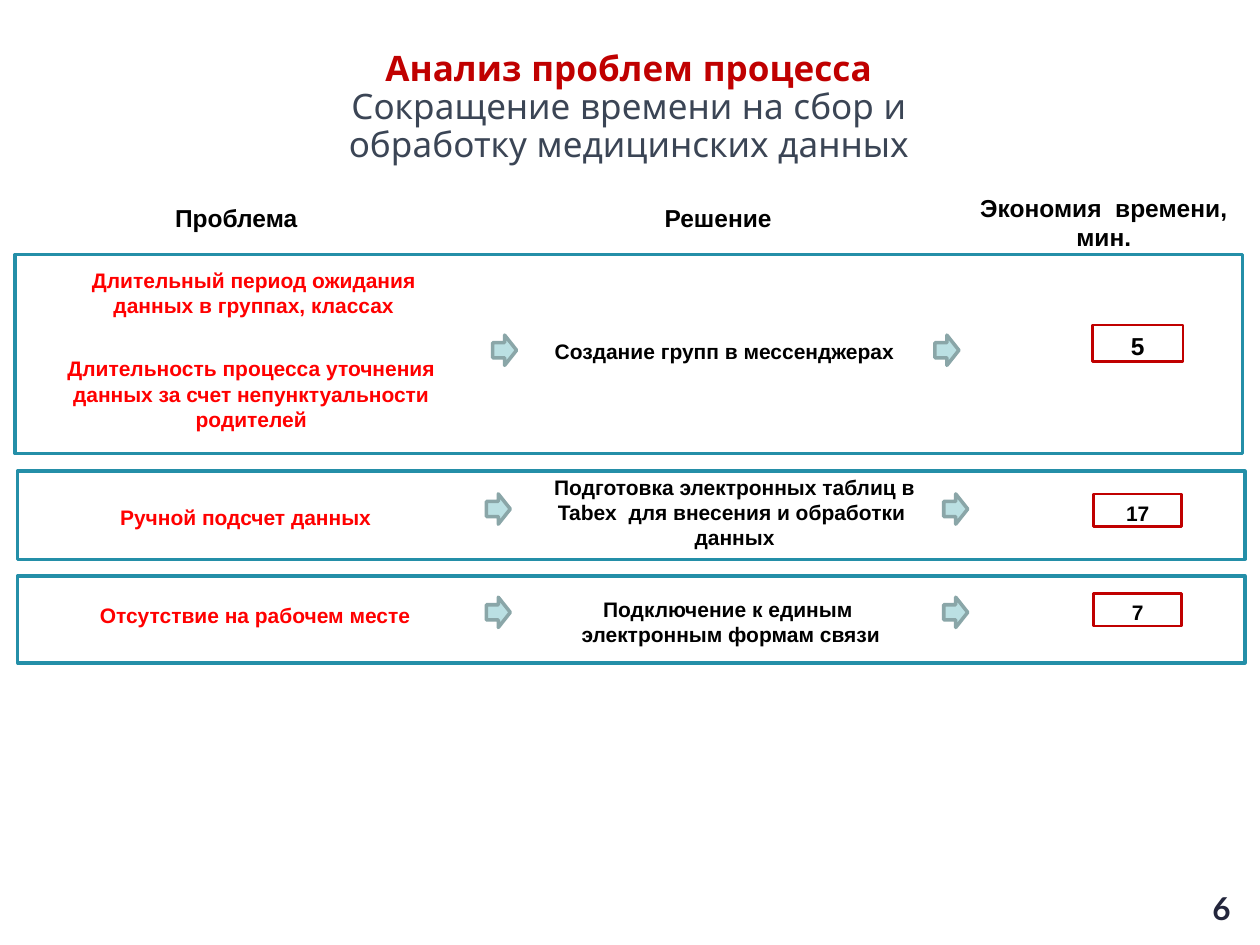
from pptx import Presentation
from pptx.dml.color import RGBColor
from pptx.enum.shapes import MSO_SHAPE
from pptx.enum.text import MSO_ANCHOR, PP_ALIGN
from pptx.util import Inches, Pt

# The slide is a grid of 100 columns by 75 rows
UNIT = Inches(0.1)
BLACK, RED, DARK, TEAL = "000000", "FF0000", "C00000", "248FA8"

# Column heads: text, place
HEADS = [
    ("Экономия  времени, мин.", (75.2, 14.8, 24.8, 5.3)),
    ("Проблема", (9.6, 15.6, 18.3, 3)),
    ("Решение", (48.3, 15.6, 17.4, 3)),
]

# Rows: frame, problems, solution, saving with its place and size, arrows
ROWS = [
    ((1.2, 20.2, 97.4, 15.8),
     [("Длительный период ожидания данных в группах, классах",
       (3.1, 20.3, 34.1, 5)),
      ("Длительность процесса уточнения данных за счет "
       "непунктуальности родителей", (2.3, 27.3, 35.3, 7.1))],
     ("Создание групп в мессенджерах", (41.4, 25.9, 32.2, 3.1)),
     ("5", (86.7, 25.8, 7.2, 2.9), 14),
     (39.1, 74.2), 26.6),
    ((1.4, 37.4, 97.4, 7),
     [("Ручной подсчет данных", (2.3, 39.1, 34.4, 3.1))],
     ("Подготовка электронных таблиц в Tabex  для внесения и обработки  "
      "данных", (42.2, 36.7, 32.2, 7.1)),
     ("17", (86.8, 39.2, 7, 2.6), 12),
     (38.6, 74.9), 39.2),
    ((1.4, 45.7, 97.4, 6.9),
     [("Отсутствие на рабочем месте", (2.3, 46.9, 35.9, 3.1))],
     ("Подключение к единым  электронным формам связи",
      (41.9, 46.4, 32.2, 5.1)),
     ("7", (86.8, 47.1, 7, 2.6), 12),
     (38.6, 74.9), 47.4),
]


def rgb(code):
    return RGBColor.from_string(code)


def cells(place):
    return [int(n * UNIT) for n in place]


def style(font, size, color, name="Arial", bold=True):
    font.size, font.name, font.bold = Pt(size), name, bold
    font.color.rgb = rgb(color)


def write(shape, text, size, color, top=0.09, name="Arial", space=1):
    frame = shape.text_frame
    frame.word_wrap = True
    frame.vertical_anchor = MSO_ANCHOR.MIDDLE
    frame.margin_left = frame.margin_right = Inches(0.1)
    frame.margin_top, frame.margin_bottom = Inches(top), Inches(0.01)
    frame.text = text
    para = frame.paragraphs[0]
    para.alignment, para.line_spacing = PP_ALIGN.CENTER, space
    style(para.runs[0].font, size, color, name)


def label(slide, text, place, size=12, color=BLACK, **more):
    box = slide.shapes.add_textbox(*cells(place))
    write(box, text, size, color, **more)


def block(slide, kind, place, line, width=2, fill=None):
    shape = slide.shapes.add_shape(kind, *cells(place))
    shape.shadow.inherit = False
    shape.line.color.rgb, shape.line.width = rgb(line), Pt(width)
    if fill:
        shape.fill.solid()
        shape.fill.fore_color.rgb = rgb(fill)
    else:
        shape.fill.background()
    return shape


def title(slide):
    head = slide.shapes.title
    head.left, head.top, head.width, head.height = cells((2.4, 3.6, 95, 9.3))
    frame = head.text_frame
    frame.vertical_anchor = MSO_ANCHOR.TOP
    frame.word_wrap = False
    para = frame.paragraphs[0]
    para.text = "Анализ проблем процесса\vСокращение времени на сбор и" \
                "\vобработку медицинских данных"
    para.alignment, para.line_spacing = PP_ALIGN.CENTER, 0.9
    for i, run in enumerate(para.runs):
        style(run.font, 20, "3B4555" if i else DARK, "Quicksand", i == 0)


def row(slide, frame, issues, answer, saving, arrows, top):
    for text, place in issues:
        label(slide, text, place, color=RED)
    label(slide, *answer)
    text, place, size = saving
    box = block(slide, MSO_SHAPE.RECTANGLE, place, DARK, 1.5)
    write(box, text, size, BLACK, space=0.8)
    block(slide, MSO_SHAPE.RECTANGLE, frame, TEAL)
    for left in arrows:
        block(slide, MSO_SHAPE.RIGHT_ARROW, (left, top, 1.9, 2.4),
              "8AA6A8", fill="BBE0E3")


def main():
    deck = Presentation()
    deck.slide_width, deck.slide_height = 100 * UNIT, 75 * UNIT
    slide = deck.slides.add_slide(deck.slide_layouts[5])
    title(slide)
    for text, place in HEADS:
        label(slide, text, place, 14, top=0.05)
    for parts in ROWS:
        row(slide, *parts)
    # Page number
    label(slide, "6", (94.5, 70.3, 4.9, 3.1), 18, "23263C",
          top=0.05, name="Lato")
    deck.save("out.pptx")


if __name__ == "__main__":
    main()
